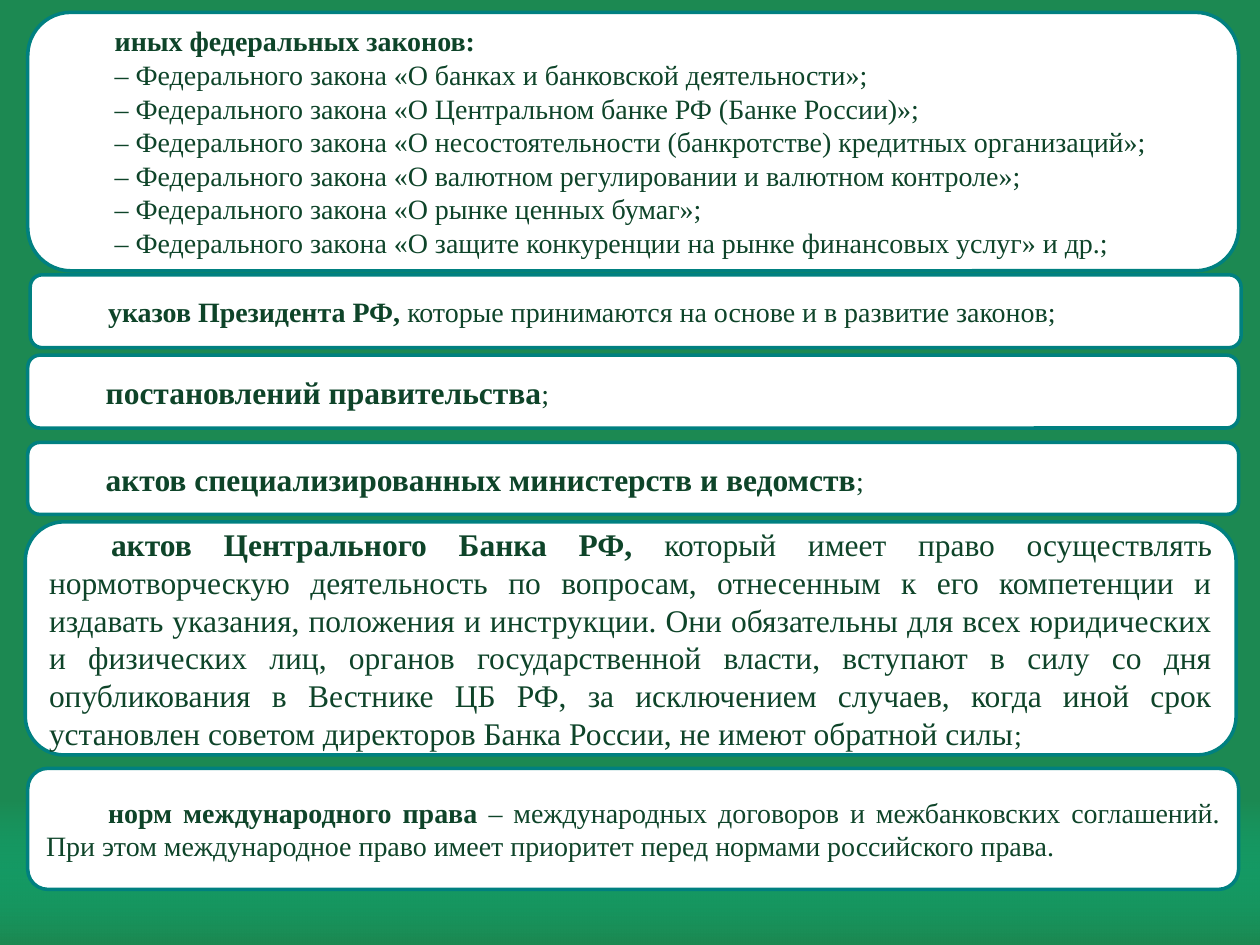
from lxml import etree
from pptx import Presentation
from pptx.dml.color import RGBColor
from pptx.enum.shapes import MSO_SHAPE
from pptx.enum.text import MSO_ANCHOR, PP_ALIGN
from pptx.oxml.ns import qn
from pptx.util import Cm, Pt

RECT = MSO_SHAPE.RECTANGLE
ROUND = MSO_SHAPE.ROUNDED_RECTANGLE
MIDDLE = MSO_ANCHOR.MIDDLE
JUSTIFY = PP_ALIGN.JUSTIFY

GREEN, MINT, TEAL, DARK, WHITE = "1C8952", "00CC99", "008080", "0E4429", "FFFFFF"
FONT = "Times New Roman"
CARD_WIDTH = 24.41
INDENT = 1.25

LAWS = [
    "О банках и банковской деятельности»;",
    "О Центральном банке РФ (Банке России)»;",
    "О несостоятельности (банкротстве) кредитных организаций»;",
    "О валютном регулировании и валютном контроле»;",
    "О рынке ценных бумаг»;",
    "О защите конкуренции на рынке финансовых услуг» и др.;",
]
CENTRAL_BANK = (
    "который имеет право осуществлять нормотворческую деятельность по вопросам, "
    "отнесенным к его компетенции и издавать указания, положения и инструкции. "
    "Они обязательны для всех юридических и физических лиц, органов государственной "
    "власти, вступают в силу со дня опубликования в Вестнике ЦБ РФ, за исключением "
    "случаев, когда иной срок установлен советом директоров Банка России, "
    "не имеют обратной силы"
)
INTERNATIONAL = (
    "– международных договоров и межбанковских соглашений. При этом международное "
    "право имеет приоритет перед нормами российского права."
)

CARDS = [
    ((0.56, 0.25, CARD_WIDTH, 5.21),
     [[("иных федеральных законов:", 16, True)]]
     + [[(f"– Федерального закона «{law}", 16, False)] for law in LAWS]),
    ((0.61, 5.54, CARD_WIDTH, 1.47),
     [[("указов Президента РФ, ", 16, True),
       ("которые принимаются на основе и в развитие законов;", 16, False)]]),
    ((0.56, 7.16, CARD_WIDTH, 1.47),
     [[("постановлений правительства", 18, True), (";", 16, False)]]),
    ((0.56, 8.92, CARD_WIDTH, 1.45),
     [[("актов специализированных министерств и ведомств", 18, True), (";", 16, False)]]),
    ((0.51, 10.52, CARD_WIDTH, 4.7),
     [[("актов Центрального Банка РФ, ", 18, True), (CENTRAL_BANK, 18, False),
       (";", 16, False)]]),
    ((0.56, 15.49, CARD_WIDTH, 2.44),
     [[("норм международного права ", 16, True), (INTERNATIONAL, 16, False)]]),
]


def rgb(value):
    """Return the colour for a hex string."""
    return RGBColor.from_string(value)


def add_box(s, kind, box):
    """Add a shadowless preset shape in a box given in centimetres."""
    sp = s.shapes.add_shape(kind, *(Cm(v) for v in box))
    sp.shadow.inherit = False
    return sp


def add_footer_glow(s, box):
    """Add the band that fades from transparent mint to the page green."""
    sp = add_box(s, RECT, box)
    sp.line.fill.background()
    sp.fill.gradient()
    sp.fill.gradient_angle = 270
    for stop, color in zip(sp.fill.gradient_stops, (MINT, GREEN)):
        stop.color.rgb = rgb(color)
    first = next(sp.element.iter(qn("a:srgbClr")))
    etree.SubElement(first, qn("a:alpha")).set("val", "0")


def add_paragraph(p, runs):
    """Fill a justified paragraph with an indented first line."""
    p.alignment = JUSTIFY
    pPr = p._p.get_or_add_pPr()
    pPr.set("marL", "0")
    pPr.set("indent", str(Cm(INDENT)))
    for text, size, bold in runs:
        r = p.add_run()
        r.text = text
        r.font.name = FONT
        r.font.size = Pt(size)
        r.font.bold = bold
        r.font.color.rgb = rgb(DARK)


def add_card(s, box, paragraphs):
    """Add a white rounded card with its text."""
    sp = add_box(s, ROUND, box)
    sp.fill.solid()
    sp.fill.fore_color.rgb = rgb(WHITE)
    sp.line.color.rgb = rgb(TEAL)
    sp.line.width = Pt(2)
    tf = sp.text_frame
    tf.word_wrap = True
    tf.vertical_anchor = MIDDLE
    for i, runs in enumerate(paragraphs):
        add_paragraph(tf.add_paragraph() if i else tf.paragraphs[0], runs)


def main():
    """Build the slide with the sources of banking law."""
    prs = Presentation()
    prs.slide_width, prs.slide_height = Cm(25.4), Cm(19.05)
    s = prs.slides.add_slide(prs.slide_layouts[6])
    s.background.fill.solid()
    s.background.fill.fore_color.rgb = rgb(GREEN)
    add_footer_glow(s, (0, 16.13, 25.4, 2.92))
    for box, paragraphs in CARDS:
        add_card(s, box, paragraphs)
    prs.save("out.pptx")


if __name__ == "__main__":
    main()
